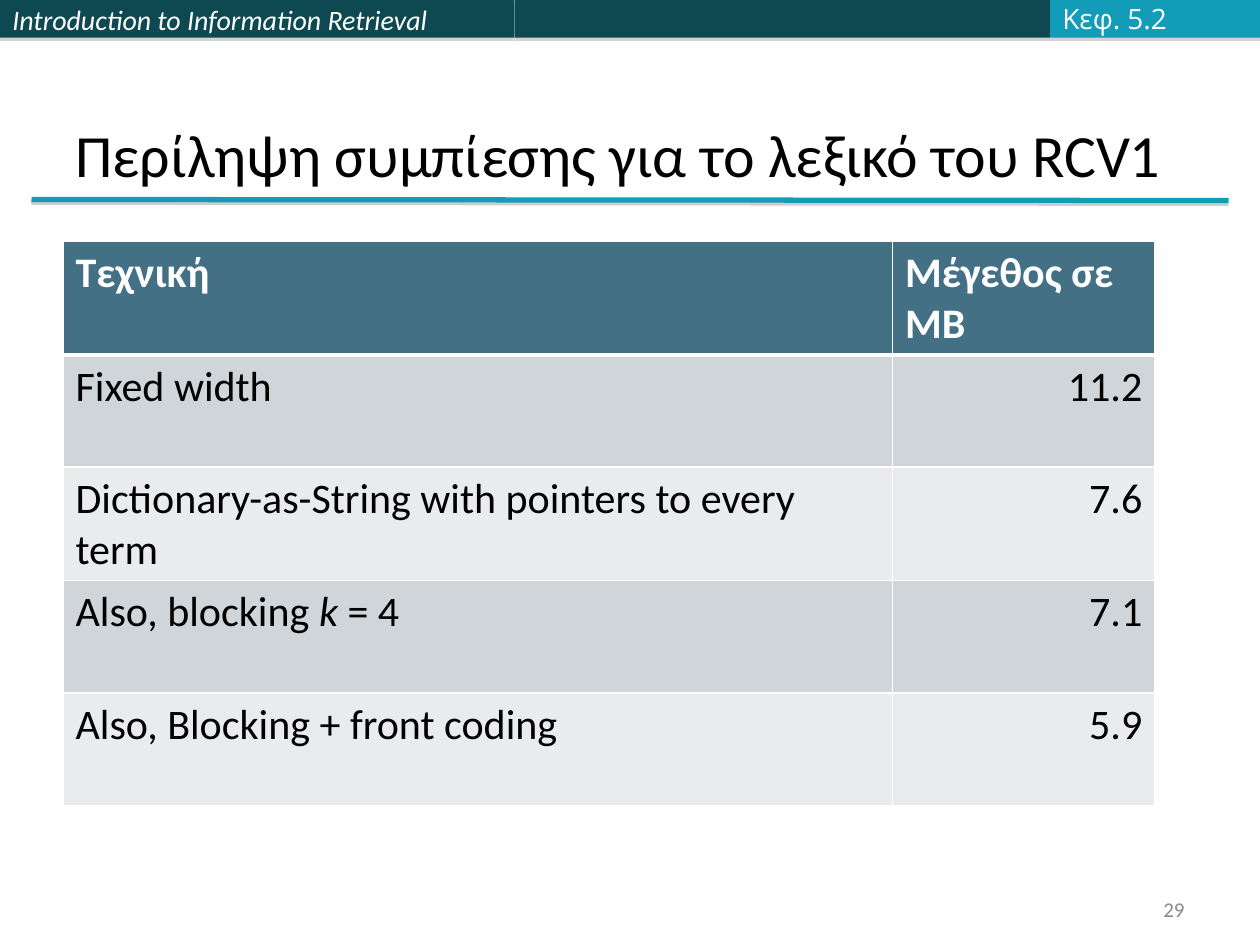
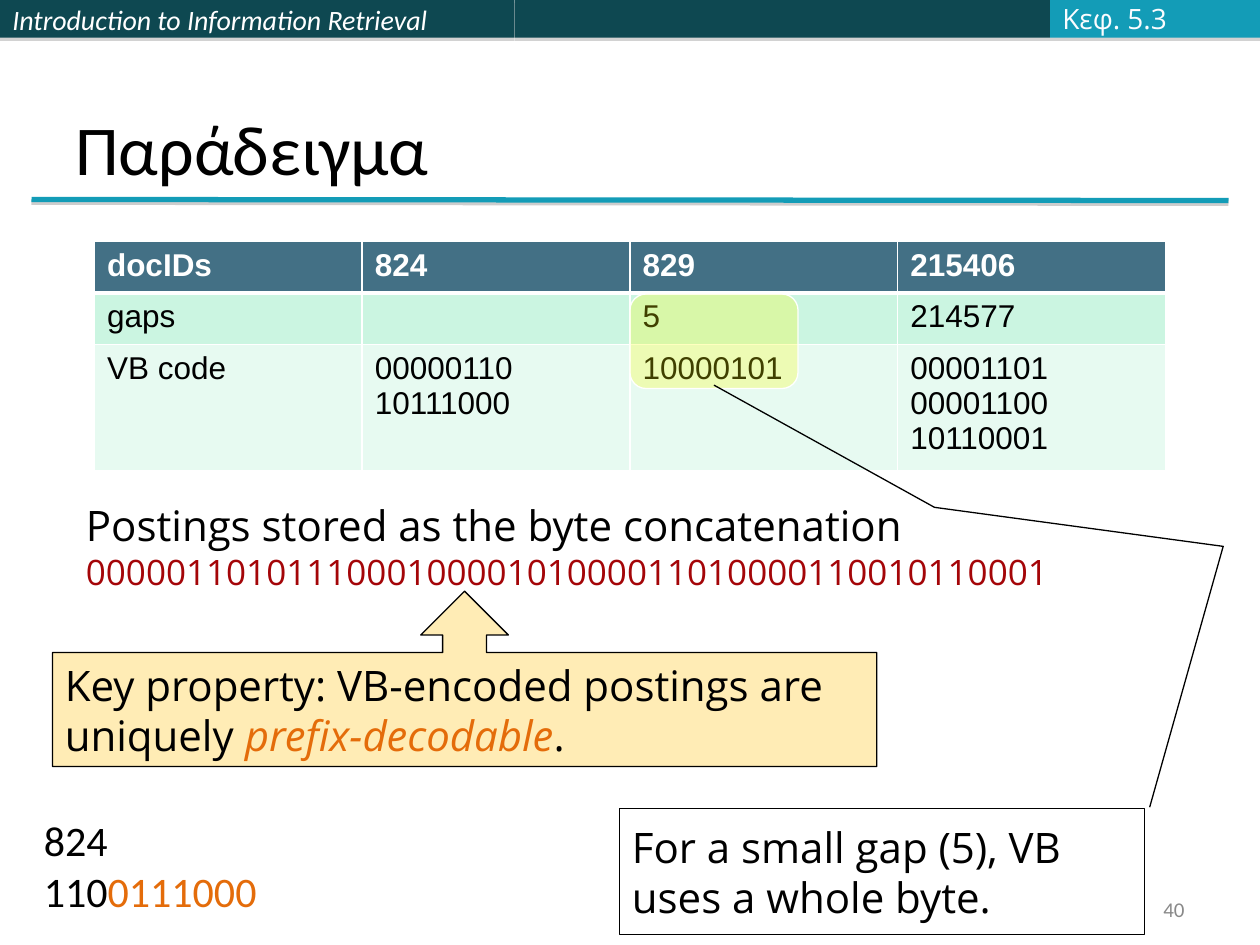
from lxml.etree import SubElement
from pptx import Presentation
from pptx.dml.color import RGBColor
from pptx.enum.shapes import MSO_CONNECTOR, MSO_SHAPE
from pptx.enum.text import MSO_ANCHOR, PP_ALIGN
from pptx.oxml import parse_xml
from pptx.oxml.ns import nsdecls, qn
from pptx.util import Inches, Pt

COLUMNS, ROWS = 120, 90
WIDTH, HEIGHT = Inches(10), Inches(7.5)
BLACK = RGBColor(0x00, 0x00, 0x00)
WHITE = RGBColor(0xFF, 0xFF, 0xFF)
NEAR_WHITE = RGBColor(0xFB, 0xFC, 0xFF)
GREY = RGBColor(0x89, 0x89, 0x89)
SHADOW_GREY = RGBColor(0x80, 0x80, 0x80)
DARK_TEAL = RGBColor(0x0E, 0x48, 0x51)
TEAL = RGBColor(0x13, 0x9C, 0xB7)
HEADER_BLUE = RGBColor(0x43, 0x70, 0x85)
GREY_BANDS = RGBColor(0xCF, 0xD5, 0xD9), RGBColor(0xE9, 0xEB, 0xED)
GREEN_BANDS = RGBColor(0xCB, 0xF5, 0xE1), RGBColor(0xE7, 0xFA, 0xF1)
AMBER = RGBColor(0xFF, 0xC0, 0x00)
YELLOW = RGBColor(0xFF, 0xFF, 0x00)
ORANGE = RGBColor(0xE4, 0x6C, 0x0A)
CODE_RED = RGBColor(0xA4, 0x05, 0x08)
CALIBRI, OPEN_SANS, ARIAL = "Calibri", "Open Sans", "Arial"


def columns(count):
    return int(WIDTH * count / COLUMNS)


def rows(count):
    return int(HEIGHT * count / ROWS)


def place(left, top, width, height):
    return columns(left), rows(top), columns(width), rows(height)


def style_font(font, size=None, name=None, color=None, italic=None, bold=None):
    if size:
        font.size = Pt(size)
    if name:
        font.name = name
    if color is not None:
        font.color.rgb = color
    if italic is not None:
        font.italic = italic
    if bold is not None:
        font.bold = bold


def write(frame, lines, align=PP_ALIGN.LEFT, **font):
    """Write lines of text; a line is a string or a list of (text, run style)."""
    for index, line in enumerate(lines):
        paragraph = frame.paragraphs[0] if index == 0 else frame.add_paragraph()
        paragraph.alignment = align
        style_font(paragraph.font, **font)
        for text, run_style in [(line, {})] if isinstance(line, str) else line:
            run = paragraph.add_run()
            run.text = text
            style_font(run.font, **run_style)


def cast_shadow(shape, opacity, distance):
    properties = shape._element.spPr
    effects = properties.find(qn("a:effectLst"))
    if effects is None:
        effects = SubElement(properties, qn("a:effectLst"))
    effects.append(parse_xml(
        f'<a:outerShdw {nsdecls("a")} blurRad="0" dist="{Pt(distance)}" dir="5400000" rotWithShape="0">'
        f'<a:srgbClr val="{SHADOW_GREY}"><a:alpha val="{opacity * 1000}"/></a:srgbClr></a:outerShdw>'))


def draw_borders(cell, top, bottom):
    properties = cell._tc.get_or_add_tcPr()
    sides = [("lnL", 1), ("lnR", 1), ("lnT", top), ("lnB", bottom)]
    for position, (side, width) in enumerate(sides):
        properties.insert(position, parse_xml(
            f'<a:{side} {nsdecls("a")} w="{Pt(width)}"><a:solidFill>'
            f'<a:srgbClr val="{WHITE}"/></a:solidFill></a:{side}>'))


class LectureDeck:
    """Holds the lecture style and draws elements on the current slide."""

    def __init__(self):
        self.presentation = Presentation()
        self.presentation.slide_width = WIDTH
        self.presentation.slide_height = HEIGHT
        self.slide = None

    def start_slide(self, title, title_size, chapter, number):
        self.slide = self.presentation.slides.add_slide(self.presentation.slide_layouts[6])
        for left, width, color, lines in [
            (0, 49, DARK_TEAL, ["Introduction to Information Retrieval"]),
            (49, 51, DARK_TEAL, []),
            (100, 20, TEAL, []),
        ]:
            band = self.shape(MSO_SHAPE.RECTANGLE, (left, 0, width, 3.6), color)
            cast_shadow(band, 35, 1.8)
            write(band.text_frame, lines, size=16, name=CALIBRI, color=WHITE, italic=True)
        self.rule((3, 19), (117, 19.1))
        self.text((6, 3.6, 108, 15), [title], MSO_ANCHOR.BOTTOM,
                  size=title_size, name=CALIBRI, color=BLACK)
        self.text((100, -0.48, 13.2, 4.44), [chapter], MSO_ANCHOR.MIDDLE,
                  size=16, name=OPEN_SANS, color=NEAR_WHITE)
        self.text((86, 85, 28, 3.2), [number], MSO_ANCHOR.MIDDLE,
                  align=PP_ALIGN.RIGHT, size=12, name=CALIBRI, color=GREY)

    def rule(self, start, end):
        line = self.slide.shapes.add_connector(
            MSO_CONNECTOR.STRAIGHT, columns(start[0]), rows(start[1]), columns(end[0]), rows(end[1]))
        line.line.color.rgb = TEAL
        line.line.width = Pt(3)
        cast_shadow(line, 38, 1.6)

    def text(self, box, lines, anchor=MSO_ANCHOR.TOP, **style):
        frame = self.slide.shapes.add_textbox(*place(*box)).text_frame
        frame.word_wrap = True
        frame.vertical_anchor = anchor
        write(frame, lines, **style)

    def shape(self, kind, box, fill=None, opacity=100, outline=None, adjustments=()):
        shape = self.slide.shapes.add_shape(kind, *place(*box))
        shape.shadow.inherit = False
        for index, value in enumerate(adjustments):
            shape.adjustments[index] = value
        if fill is None:
            shape.fill.background()
        else:
            shape.fill.solid()
            shape.fill.fore_color.rgb = fill
            if opacity < 100:
                color = shape._element.spPr.find(qn("a:solidFill"))[0]
                SubElement(color, qn("a:alpha")).set("val", str(opacity * 1000))
        if outline is None:
            shape.line.fill.background()
        else:
            shape.line.color.rgb = outline
            shape.line.width = Pt(0.75)
        shape.text_frame.word_wrap = True
        shape.text_frame.vertical_anchor = MSO_ANCHOR.MIDDLE
        return shape

    def table(self, corner, widths, heights, content, bands, number_align, **font):
        frame = self.slide.shapes.add_table(
            len(heights), len(widths), *place(*corner, sum(widths), sum(heights)))
        table = frame.table
        table.horz_banding = False
        for column, width in zip(table.columns, widths):
            column.width = columns(width)
        for index, (row, height, values) in enumerate(zip(table.rows, heights, content)):
            row.height = rows(height)
            header = index == 0
            for position, (cell, value) in enumerate(zip(row.cells, values)):
                cell.fill.solid()
                cell.fill.fore_color.rgb = HEADER_BLUE if header else bands[(index - 1) % 2]
                draw_borders(cell, 3 if index == 1 else 1, 3 if header else 1)
                align = PP_ALIGN.LEFT if header or position == 0 else number_align
                write(cell.text_frame, [value], align, bold=header,
                      color=WHITE if header else BLACK, **font)


def add_compression_summary(deck):
    deck.start_slide("Περίληψη συμπίεσης για το λεξικό του RCV1", 34.2, "Κεφ. 5.2", "29")
    techniques = [
        ("Τεχνική", "Μέγεθος σε MB"),
        ("Fixed width", "11.2"),
        ("Dictionary-as-String with pointers to every term", "7.6"),
        ([("Also, blocking ", {}), ("k ", {"italic": True}), ("= 4", {})], "7.1"),
        ("Also, Blocking + front coding", "5.9"),
    ]
    deck.table((6, 23), [79, 25], [10.7, 10.7, 10.1, 10.7, 10.7], techniques,
               GREY_BANDS, PP_ALIGN.RIGHT, size=24, name=CALIBRI)


def add_variable_byte_example(deck):
    deck.start_slide("Παράδειγμα", 40, "Κεφ. 5.3", "40")
    postings = [
        ("docIDs", "824", "829", "215406"),
        ("gaps", "", "5", "214577"),
        ("VB code", "00000110 10111000", "10000101", "00001101 00001100 10110001"),
    ]
    deck.table((9, 23), [25.5] * 4, [4.9, 4.9, 11.1], postings,
               GREEN_BANDS, PP_ALIGN.LEFT, size=18, name=ARIAL)
    body = {"size": 24, "name": OPEN_SANS, "color": BLACK}
    concatenation = [("000001101011100010000101000011010000110010110001",
                      {"size": 20, "color": CODE_RED})]
    deck.text((7, 47, 105.5, 10.1),
              ["Postings stored as the byte concatenation", concatenation], **body)
    key_property = deck.shape(MSO_SHAPE.UP_ARROW_CALLOUT, (5, 56.3, 78.5, 16.7), AMBER, 29,
                              BLACK, (0.25, 0.25, 0.25, 0.65))
    write(key_property.text_frame, [
        "Key property: VB-encoded postings are",
        [("uniquely ", {}), ("prefix-decodable", {"color": ORANGE, "italic": True}), (".", {})],
    ], **body)
    deck.shape(MSO_SHAPE.ROUNDED_RECTANGLE, (60, 28, 16, 9), YELLOW, 25, WHITE, (0.17,))
    small_gap = deck.shape(MSO_SHAPE.LINE_CALLOUT_3, (59, 77, 50, 12), outline=BLACK,
                           adjustments=(-0.01, 1.01, -2.08, 1.15, -2.39, 0.6, -3.36, 0.18))
    write(small_gap.text_frame, ["For a small gap (5), VB", "uses a whole byte."], **body)
    deck.text((3, 77, 37, 10.9), ["824", [("110", {}), ("0111000", {"color": ORANGE})]],
              size=24, name=CALIBRI, color=BLACK)


def main():
    deck = LectureDeck()
    add_compression_summary(deck)
    add_variable_byte_example(deck)
    deck.presentation.save("out.pptx")


if __name__ == "__main__":
    main()
